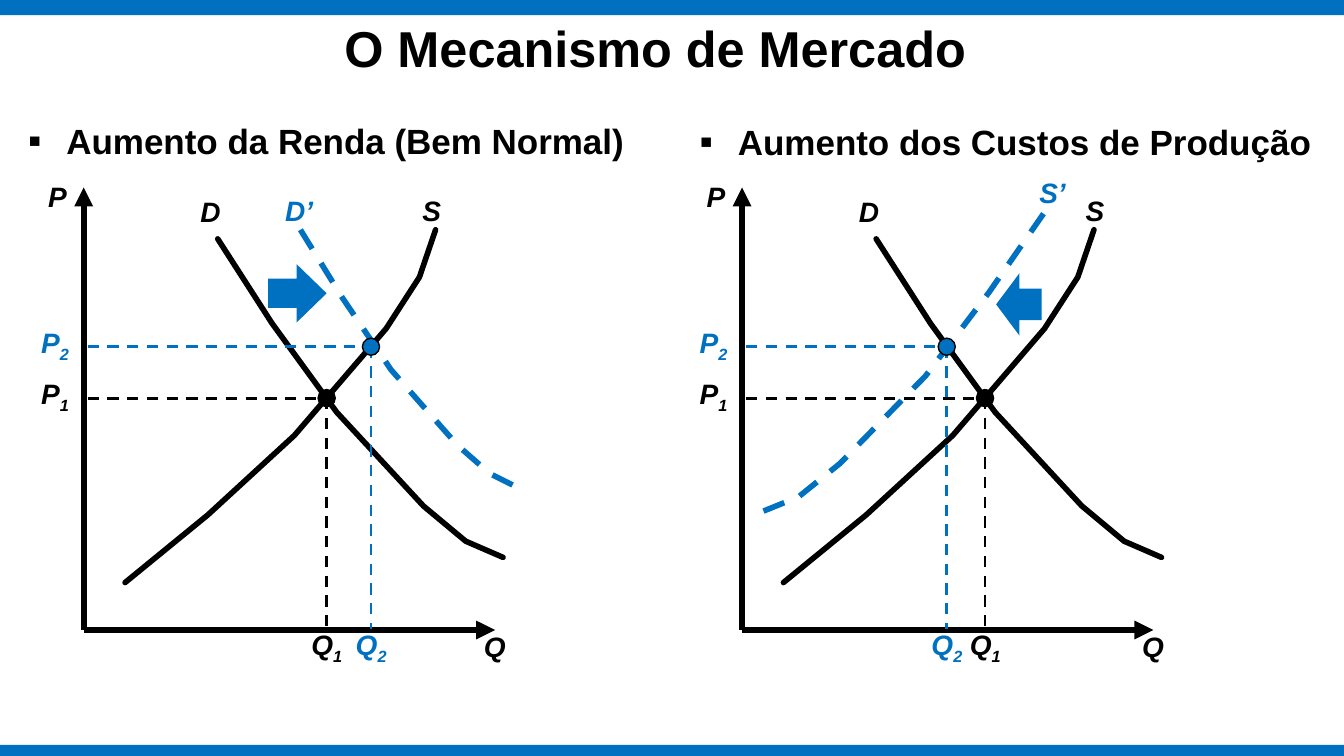
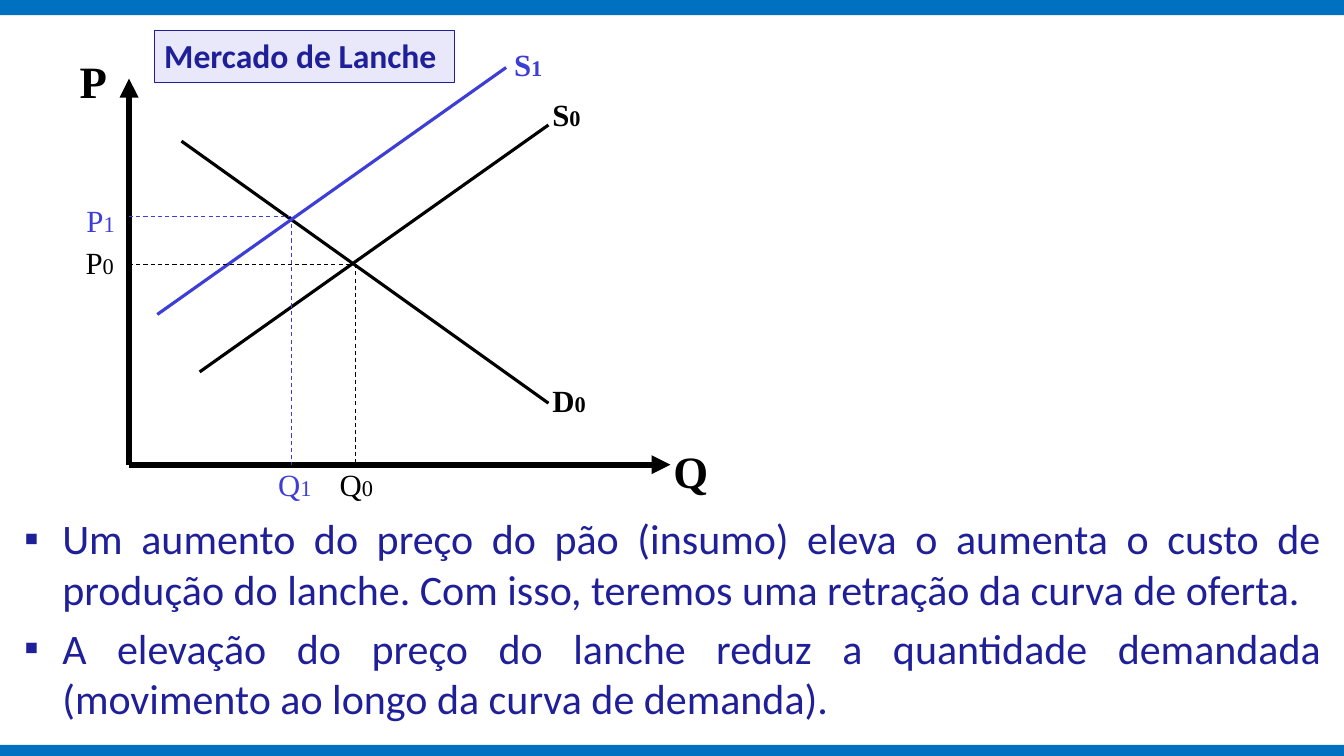
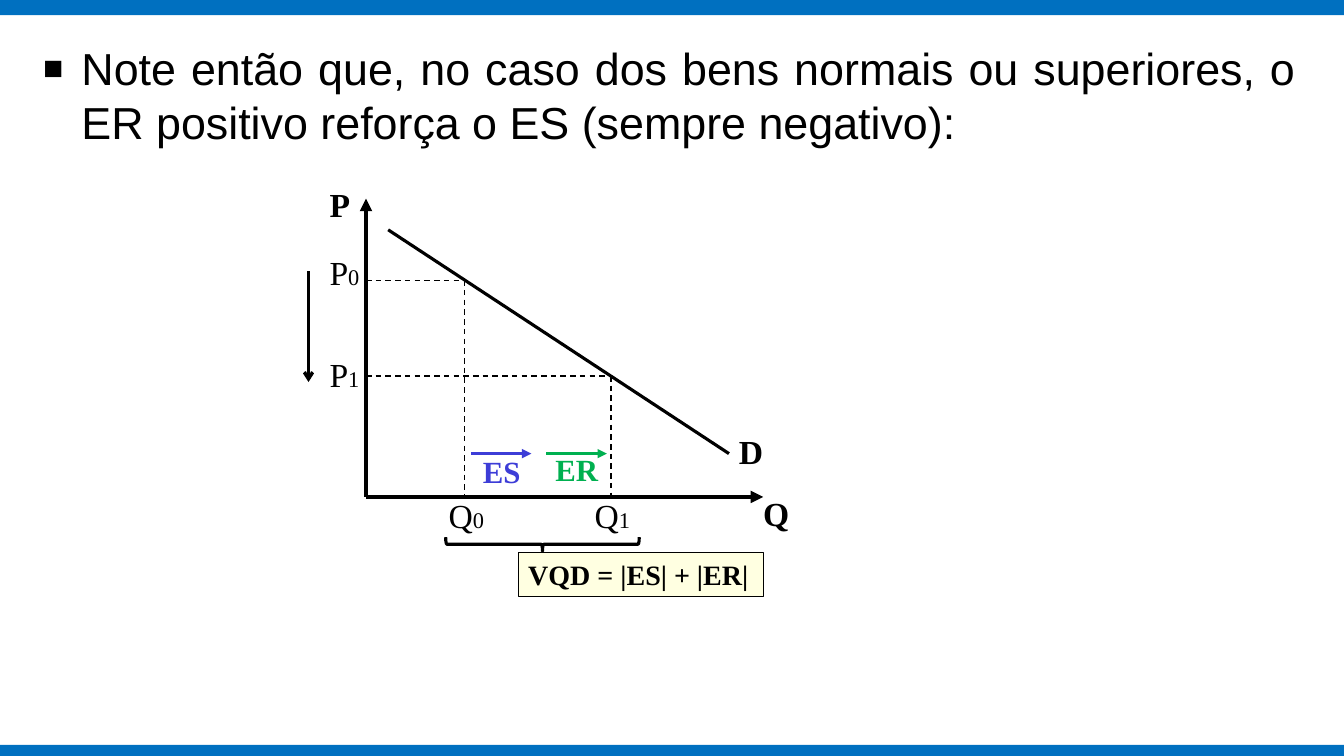
from dataclasses import dataclass

from lxml.etree import SubElement
from pptx import Presentation
from pptx.dml.color import RGBColor
from pptx.enum.dml import MSO_LINE_DASH_STYLE as Dash
from pptx.enum.shapes import MSO_CONNECTOR as Connector, MSO_SHAPE as Preset
from pptx.enum.text import MSO_ANCHOR as Anchor, PP_ALIGN as Align
from pptx.oxml.ns import qn
from pptx.util import Inches, Pt

# Grid: square cells of one inch, 13.33 columns by 7.5 rows
CELL = Inches(1)
COLUMNS, ROWS = 13.33, 7.5


@dataclass(frozen=True)
class Theme:
    band: str = "0070C0"
    black: str = "000000"
    violet: str = "3D3DD7"
    navy: str = "1F1F99"
    lilac: str = "E8E8FA"
    cream: str = "FFFFE1"
    green: str = "00B050"


THEME = Theme()


def font_style(name, size, bold=False, italic=False):
    return {"name": name, "size": Pt(size), "bold": bold, "italic": italic}


SERIF = "Times New Roman"
STYLES = {
    "title": font_style("Arial", 36, bold=True),
    "heading": font_style("Arial", 25, bold=True),
    "note": font_style("Arial", 32),
    "body": font_style("Calibri", 30),
    "tag": font_style("Calibri", 24, bold=True),
    "market": font_style("Arial", 20, bold=True, italic=True),
    "snack axis": font_style(SERIF, 32, bold=True),
    "snack curve": font_style(SERIF, 22, bold=True),
    "snack value": font_style(SERIF, 22),
    "effect axis": font_style(SERIF, 24, bold=True),
    "effect value": font_style(SERIF, 24),
    "formula": font_style(SERIF, 20, bold=True),
}
INDEX_SIZE = Pt(16)


# Formatting helpers
def cells(*lengths):
    return [round(length * CELL) for length in lengths]


def apply_format(target, values):
    for name, value in values.items():
        setattr(target, name, value)


def rgb(colour):
    return RGBColor.from_string(colour)


def draw_line(shape, colour, width, dash=None, arrow=None, cap=None):
    shape.line.color.rgb = rgb(colour)
    apply_format(shape.line, {"width": Pt(width), "dash_style": dash})
    outline = shape.element.spPr.find(qn("a:ln"))
    if cap:
        outline.set("cap", cap)
    if arrow:
        SubElement(outline, qn("a:tailEnd"), type=arrow)


def add_run(paragraph, text, style, colour):
    run = paragraph.add_run()
    run.text = text
    apply_format(run.font, STYLES[style])
    run.font.color.rgb = rgb(colour)
    return run


def add_bullet(paragraph, symbol, percent, colour):
    properties = paragraph._p.get_or_add_pPr()
    indent = Inches(0.38)
    properties.set("marL", str(indent))
    properties.set("indent", str(-indent))
    tint = SubElement(properties, qn("a:buClr"))
    SubElement(tint, qn("a:srgbClr"), val=colour)
    SubElement(properties, qn("a:buSzPct"), val=str(percent * 1000))
    SubElement(properties, qn("a:buFont"), typeface="Arial")
    SubElement(properties, qn("a:buChar"), char=symbol)


# Elements
def line(slide, start, end, colour, width, **options):
    connector = slide.shapes.add_connector(Connector.STRAIGHT, *cells(*start, *end))
    draw_line(connector, colour, width, **options)
    SubElement(connector.element.spPr, qn("a:effectLst"))


def curve(slide, points, colour, **options):
    start, *others = [cells(*point) for point in points]
    builder = slide.shapes.build_freeform(*start)
    builder.add_line_segments(others, close=False)
    shape = builder.convert_to_shape()
    shape.shadow.inherit = False
    shape.fill.background()
    draw_line(shape, colour, 4, **options)


def preset(slide, kind, box, fill=None, outline=None):
    shape = slide.shapes.add_shape(kind, *cells(*box))
    shape.shadow.inherit = False
    if fill:
        shape.fill.solid()
        shape.fill.fore_color.rgb = rgb(fill)
    else:
        shape.fill.background()
    if outline:
        draw_line(shape, *outline)
    else:
        shape.line.fill.background()
    return shape


def label(slide, place, text, style, colour, index="", lowered=False):
    """Short text at (left, top, width), with an optional index digit."""
    height = STYLES[style]["size"].inches * 1.18 + 0.1
    box = slide.shapes.add_textbox(*cells(*place, height))
    box.text_frame.word_wrap = not lowered
    paragraph = box.text_frame.paragraphs[0]
    add_run(paragraph, text, style, colour)
    if index:
        run = add_run(paragraph, index, style, colour)
        if lowered:
            run.font._element.set("baseline", "-25000")
        else:
            run.font.size = INDEX_SIZE


def bullets(slide, box, texts, style, colour, symbol="▪", percent=100,
            align=Align.JUSTIFY):
    frame = slide.shapes.add_textbox(*cells(*box)).text_frame
    frame.word_wrap = True
    for number, text in enumerate(texts):
        paragraph = frame.add_paragraph() if number else frame.paragraphs[0]
        apply_format(paragraph, {"alignment": align, "space_before": Pt(6)})
        add_bullet(paragraph, symbol, percent, colour)
        add_run(paragraph, text, style, colour)


def boxed_text(slide, box, text, style, colour, fill, outline):
    frame = preset(slide, Preset.RECTANGLE, box, fill, outline).text_frame
    apply_format(frame, {"word_wrap": True, "vertical_anchor": Anchor.TOP})
    frame.paragraphs[0].alignment = Align.LEFT
    add_run(frame.paragraphs[0], text, style, colour)


def axes(slide, origin, top, right, width):
    for end in ((origin[0], top), (right, origin[1])):
        line(slide, origin, end, THEME.black, width, arrow="triangle")


def guides(slide, origin, point, colour, width):
    """Dashed lines from a point on a curve to both axes."""
    for start, end in (((origin[0], point[1]), point),
                       (point, (point[0], origin[1]))):
        line(slide, start, end, colour, width, dash=Dash.DASH)


def new_slide(presentation):
    slide = presentation.slides.add_slide(presentation.slide_layouts[6])
    for top, height in ((-0.03, 0.18), (7.39, 0.13)):
        preset(slide, Preset.RECTANGLE, (0, top, COLUMNS, height), THEME.band)
    return slide


# Slide 1: two markets side by side
DEMAND = [(2.16, 2.37), (2.7, 3.21), (3.34, 4.09), (4.2, 5.02), (4.62, 5.37), (4.99, 5.53)]
SUPPLY = [(1.24, 5.78), (2.06, 5.11), (2.92, 4.32), (3.83, 3.26), (4.16, 2.75), (4.32, 2.28)]
MARKETS = [
    {
        "left": 0, "heading": "Aumento da Renda (Bem Normal)",
        "heading_box": (0.18, 1.14, 6.42, 3.9),
        "shifted": [(2.98, 2.28), (3.4, 2.96), (3.88, 3.67),
                    (4.54, 4.42), (4.86, 4.7), (5.14, 4.84)],
        "name": "D’", "name_place": (2.73, 1.87, 0.48),
        "supply_place": (4.09, 1.87, 0.39),
        "arrow": Preset.RIGHT_ARROW, "arrow_box": (2.66, 2.62, 0.58, 0.58),
        "new_quantity": 3.68,
    },
    {
        "left": 6.53, "heading": "Aumento dos Custos de Produção",
        "heading_box": (6.84, 1.15, 6.42, 0.73),
        "shifted": [(3.82, 2.12), (3.28, 2.9), (2.65, 3.73),
                    (1.8, 4.6), (1.39, 4.93), (1.02, 5.08)],
        "name": "S’", "name_place": (3.68, 1.69, 0.46),
        "supply_place": (4.14, 1.87, 0.39),
        "arrow": Preset.LEFT_ARROW, "arrow_box": (3.35, 2.71, 0.45, 0.62),
        "new_quantity": 2.86,
    },
]


def equilibrium(slide, left, quantity, price, colour, index):
    point = (left + quantity, price)
    guides(slide, (left + 0.87, 6.24), point, colour, 2)
    size = 0.17
    preset(slide, Preset.OVAL, (point[0] - size / 2, price - size / 2, size, size),
           colour, (THEME.black, 1))
    for text, place in (("P", (left + 0.31, price - 0.26, 0.49)),
                        ("Q", (point[0] - 0.25, 6.18, 0.52))):
        label(slide, place, text, "market", colour, index, lowered=True)


def market(slide, data):
    left = data["left"]

    def moved(place):
        return (left + place[0], *place[1:])

    # Shifted curve and its arrow
    curve(slide, map(moved, data["shifted"]), THEME.band, dash=Dash.DASH)
    arrow = preset(slide, data["arrow"], moved(data["arrow_box"]), THEME.band)
    arrow.adjustments[1] = 0.515
    # First curves, axes and names
    for points in (DEMAND, SUPPLY):
        curve(slide, map(moved, points), THEME.black, cap="rnd")
    axes(slide, (left + 0.83, 6.25), 1.86, left + 4.91, 4.5)
    names = [
        (data["name"], data["name_place"], THEME.band),
        ("D", (1.89, 1.88, 0.4), THEME.black),
        ("S", data["supply_place"], THEME.black),
        ("P", (0.38, 1.73, 0.39), THEME.black),
        ("Q", (4.7, 6.2, 0.42), THEME.black),
    ]
    for text, place, colour in names:
        label(slide, moved(place), text, "market", colour, lowered=True)
    # Equilibria and heading
    equilibrium(slide, left, data["new_quantity"], 3.44, THEME.band, "2")
    equilibrium(slide, left, 3.24, 3.95, THEME.black, "1")
    bullets(slide, data["heading_box"], [data["heading"]], "heading", THEME.black,
            percent=108, align=Align.LEFT)


def market_slide(presentation):
    slide = new_slide(presentation)
    for data in MARKETS:
        market(slide, data)
    frame = slide.shapes.add_textbox(*cells(2.12, -0.04, 8.76, 0.86)).text_frame
    apply_format(frame, {"word_wrap": True, "vertical_anchor": Anchor.BOTTOM})
    frame.paragraphs[0].alignment = Align.CENTER
    add_run(frame.paragraphs[0], "O Mecanismo de Mercado", "title", THEME.black)


# Slide 2: supply shift in the snack market
def snack_slide(presentation):
    slide = new_slide(presentation)
    origin = (1.28, 4.61)
    axes(slide, origin, 0.78, 6.65, 4.5)
    for start, end, colour in (
        ((1.8, 1.4), (5.44, 4), THEME.black),
        ((1.98, 3.69), (5.44, 1.24), THEME.black),
        ((1.56, 3.12), (5.02, 0.67), THEME.violet),
    ):
        line(slide, start, end, colour, 2.25)
    guides(slide, origin, (3.53, 2.62), THEME.black, 0.75)
    guides(slide, origin, (2.89, 2.15), THEME.violet, 0.75)
    for text, index, place, style, colour in (
        ("P", "", (0.69, 0.48, 0.35), "snack axis", THEME.black),
        ("Q", "", (6.58, 4.35, 0.35), "snack axis", THEME.black),
        ("S", "0", (5.38, 0.9, 1.21), "snack curve", THEME.black),
        ("D", "0", (5.38, 3.74, 1.21), "snack curve", THEME.black),
        ("S", "1", (5, 0.4, 1.21), "snack curve", THEME.violet),
        ("P", "0", (0.75, 2.37, 1.04), "snack value", THEME.black),
        ("Q", "0", (3.27, 4.57, 1.04), "snack value", THEME.black),
        ("P", "1", (0.76, 1.95, 1.04), "snack value", THEME.violet),
        ("Q", "1", (2.66, 4.57, 1.04), "snack value", THEME.violet),
    ):
        label(slide, place, text, style, colour, index)
    bullets(slide, (0.14, 5.04, 13.07, 1.6), [
        "Um aumento do preço do pão (insumo) eleva o aumenta o custo de produção "
        "do lanche. Com isso, teremos uma retração da curva de oferta.",
        "A elevação do preço do lanche reduz a quantidade demandada "
        "(movimento ao longo da curva de demanda).",
    ], "body", THEME.navy)
    boxed_text(slide, (1.53, 0.3, 2.98, 0.52), "Mercado de Lanche", "tag",
               THEME.navy, THEME.lilac, (THEME.navy, 1))


# Slide 3: substitution and income effects
def effects_slide(presentation):
    slide = new_slide(presentation)
    bullets(slide, (0.33, 0.36, 12.63, 1.57), [
        "Note então que, no caso dos bens normais ou superiores, o ER positivo "
        "reforça o ES (sempre negativo):",
    ], "note", THEME.black, symbol="■", percent=75)
    origin = (3.63, 4.93)
    axes(slide, origin, 1.97, 7.57, 3)
    line(slide, (3.85, 2.28), (7.23, 4.5), THEME.black, 2.25)
    for text, place in (("P", (3.17, 1.78, 0.39)), ("Q", (7.47, 4.84, 0.39)),
                        ("D", (7.23, 4.23, 0.24))):
        label(slide, place, text, "effect axis", THEME.black)
    # Prices and quantities
    for index, point, price_top in (("0", (4.61, 2.78), 2.45), ("1", (6.06, 3.73), 3.46)):
        guides(slide, origin, point, THEME.black, 1)
        for text, left, top in (("P", 3.17, price_top), ("Q", point[0] - 0.26, 4.86)):
            label(slide, (left, top, 0.59), text, "effect value", THEME.black, index)
    line(slide, (3.06, 2.69), (3.06, 3.79), THEME.black, 2.25, arrow="arrow")
    # Both effects and their sum
    for text, start, place, colour in (
        ("ES", 4.67, (4.69, 4.44, 0.61), THEME.violet),
        ("ER", 5.42, (5.41, 4.42, 0.66), THEME.green),
    ):
        line(slide, (start, 4.5), (start + 0.6, 4.5), colour, 2.25, arrow="triangle")
        label(slide, place, text, "snack curve", colour)
    brace = preset(slide, Preset.RIGHT_BRACE, (5.31, 4.44, 0.14, 1.92),
                   outline=(THEME.black, 2.25))
    brace.rotation = 90
    boxed_text(slide, (5.14, 5.48, 2.43, 0.44), "VQD = |ES| + |ER|", "formula",
               THEME.black, THEME.cream, (THEME.black, 0.75))


def main():
    presentation = Presentation()
    width, height = cells(COLUMNS, ROWS)
    apply_format(presentation, {"slide_width": width, "slide_height": height})
    for build in (market_slide, snack_slide, effects_slide):
        build(presentation)
    presentation.save("out.pptx")


if __name__ == "__main__":
    main()
